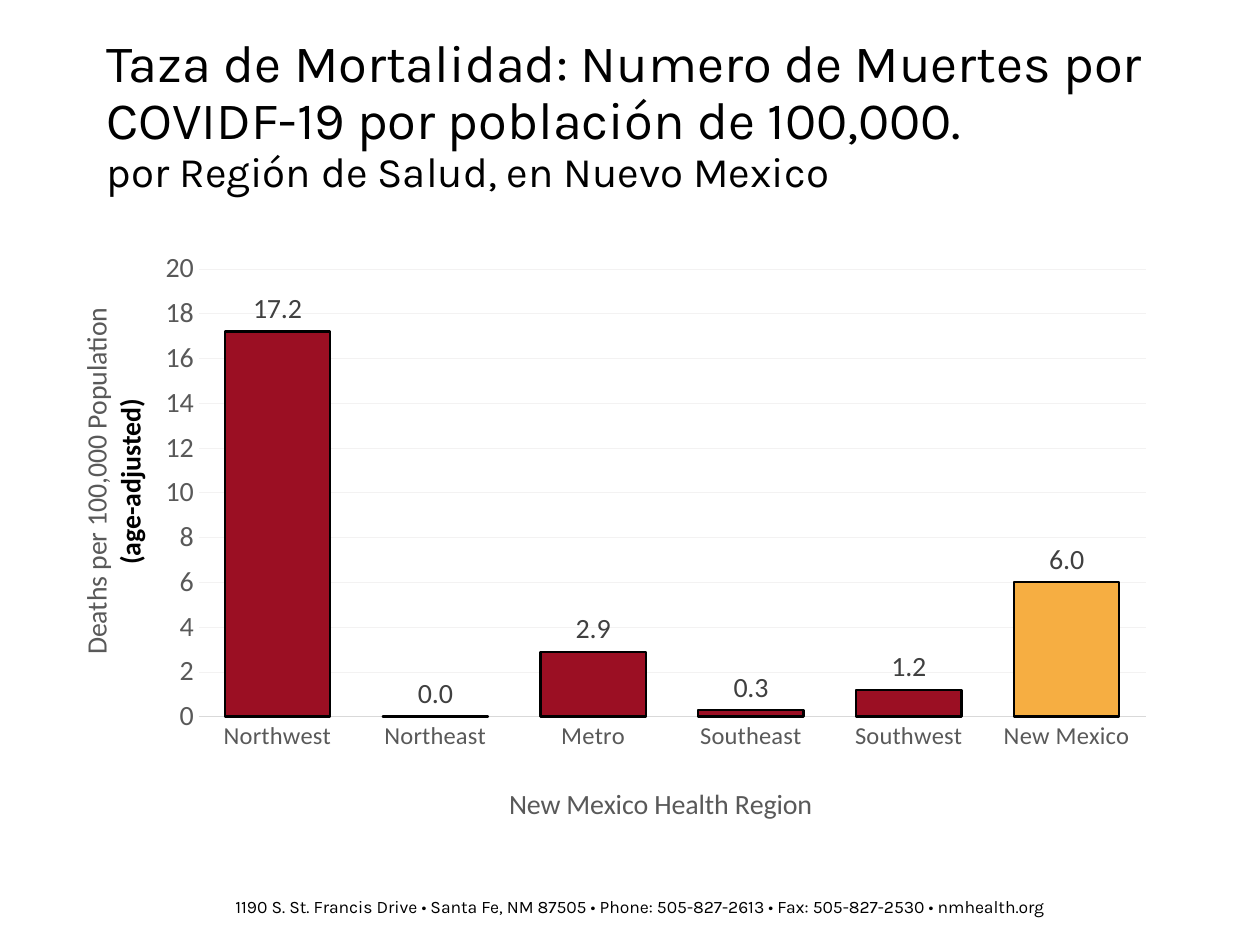
from pptx import Presentation
from pptx.chart.data import CategoryChartData as Data
from pptx.dml.color import RGBColor
from pptx.enum.chart import XL_CHART_TYPE as Kind, XL_LABEL_POSITION as Pos, XL_TICK_MARK as Tick
from pptx.enum.text import MSO_ANCHOR as Anchor
from pptx.oxml import parse_xml
from pptx.oxml.ns import nsdecls
from pptx.util import Inches, Pt

BLACK = RGBColor(0x00, 0x00, 0x00)
RED = RGBColor(0x9B, 0x0F, 0x23)
GOLD = RGBColor(0xF6, 0xAE, 0x42)
GRAY = RGBColor(0x59, 0x59, 0x59)
DARK = RGBColor(0x40, 0x40, 0x40)
RULE = RGBColor(0xD9, 0xD9, 0xD9)
GRID = RGBColor(0xF3, 0xF2, 0xF2)


def style(font, size, color, name="Calibri", bold=False):
    font.size = Pt(size)
    font.color.rgb = color
    font.name = name
    font.bold = bold


def layout(**parts):
    tags = "".join(f'<c:{tag} val="{val}"/>' for tag, val in parts.items())
    return parse_xml(
        f'<c:layout {nsdecls("c")}><c:manualLayout>{tags}</c:manualLayout></c:layout>'
    )


deck = Presentation()
deck.slide_width = Inches(10)
deck.slide_height = Inches(7.5)
slide = deck.slides.add_slide(deck.slide_layouts[6])

foot = slide.shapes.add_textbox(Inches(1.77), Inches(7.06), Inches(8.2), Inches(0.27))
foot.text_frame.word_wrap = True
line = foot.text_frame.paragraphs[0]
line.text = (
    "1190 S. St. Francis Drive • Santa Fe, NM 87505 • Phone: 505-827-2613"
    " • Fax: 505-827-2530 • nmhealth.org"
)
style(line.font, 10, BLACK, "Karla")

data = Data()
data.categories = ["Northwest", "Northeast", "Metro", "Southeast", "Southwest", "New Mexico"]
data.add_series("Series 1", [17.2, 0, 2.9, 0.3, 1.2, 6])
chart = slide.shapes.add_chart(
    Kind.COLUMN_CLUSTERED, Inches(0.5), Inches(1.92), Inches(8.75), Inches(4.67), data
).chart
chart.has_title = False
chart.has_legend = False
style(chart.font, 10, BLACK, "Karla")

area = chart.plots[0]
area.gap_width = 50
area.overlap = -27
area.vary_by_categories = False
area.has_data_labels = True
tags = area.data_labels
tags.show_value = True
tags.position = Pos.OUTSIDE_END
tags.number_format = "#,##0.0"
tags.number_format_is_linked = False
style(tags.font, 16, DARK)

bars = area.series[0]
bars.invert_if_negative = False
for part, color in ((bars, RED), (bars.points[5], GOLD)):
    part.format.fill.solid()
    part.format.fill.fore_color.rgb = color
    part.format.line.color.rgb = BLACK
    part.format.line.width = Pt(1.25)

cats = chart.category_axis
vals = chart.value_axis
titles = (
    (cats, 14, 0.4, 0.92, ["New Mexico Health Region"]),
    (vals, 16, 0.01, 0.11, ["Deaths per 100,000 Population", "(age-adjusted)"]),
)
for axis, size, left, top, words in titles:
    axis.major_tick_mark = Tick.NONE
    axis.minor_tick_mark = Tick.NONE
    style(axis.tick_labels.font, size, GRAY)
    frame = axis.axis_title.text_frame
    frame.text = "\n".join(words)
    for row, line in enumerate(frame.paragraphs):
        style(line.font, 16, BLACK if row else GRAY, bold=row > 0)
    title = axis.axis_title._element
    for old in title.findall("{*}layout"):
        title.remove(old)
    title.find("{*}tx").addnext(layout(xMode="edge", yMode="edge", x=left, y=top))

vals.axis_title.text_frame._txBody.bodyPr.set("rot", "-5400000")
vals.axis_title.text_frame._txBody.bodyPr.set("vert", "horz")
cats.format.line.color.rgb = RULE
cats.format.line.width = Pt(0.75)
vals.format.line.fill.background()
vals.minimum_scale = 0
vals.maximum_scale = 20
vals.major_unit = 2
vals.tick_labels.number_format = "#,##0"
vals.tick_labels.number_format_is_linked = False
vals.major_gridlines.format.line.color.rgb = GRID
vals.major_gridlines.format.line.width = Pt(0.25)

plot = chart._chartSpace.chart.plotArea
for old in plot.findall("{*}layout"):
    plot.remove(old)
plot.insert(0, layout(
    layoutTarget="inner", xMode="edge", yMode="edge", x=0.123, y=0.046, w=0.859, h=0.766
))

head = slide.shapes.add_textbox(Inches(0.75), Inches(0.25), Inches(8.5), Inches(1.77))
head.text_frame.word_wrap = True
head.text_frame.vertical_anchor = Anchor.TOP
line = head.text_frame.paragraphs[0]
line.line_spacing = 0.9
style(line.font, 30, BLACK, "Karla")
line.add_run().text = "Taza de Mortalidad: Numero de Muertes por COVIDF-19 por población de 100,000."
line.add_line_break()
sub = line.add_run()
sub.text = "por Región de Salud, en Nuevo Mexico"
sub.font.size = Pt(24)

deck.save("out.pptx")
